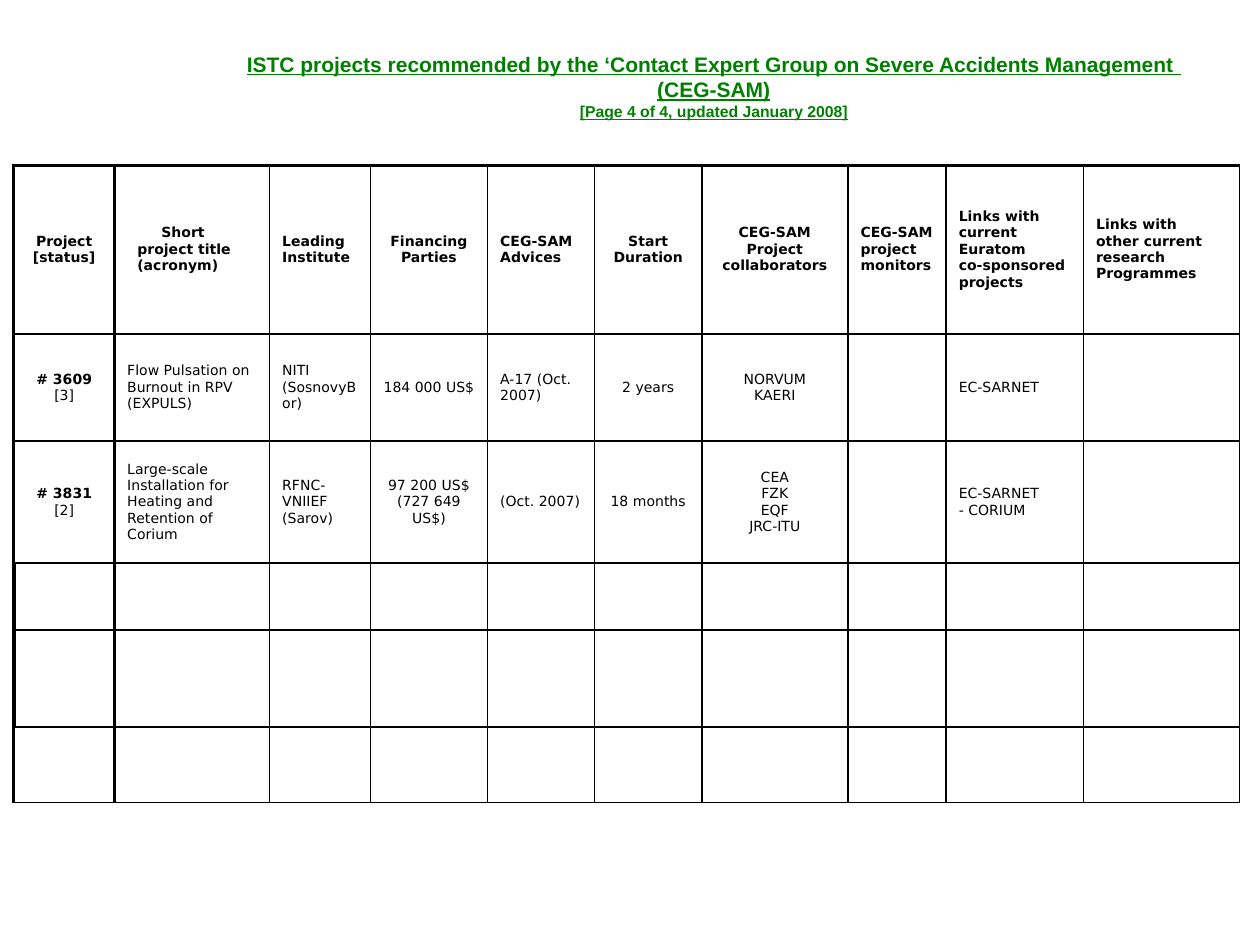
import dataclasses

import lxml.etree
import pptx
import pptx.dml.color
import pptx.enum.text
import pptx.oxml.ns
import pptx.util

Inches = pptx.util.Inches
Pt = pptx.util.Pt
Align = pptx.enum.text.PP_ALIGN
Anchor = pptx.enum.text.MSO_ANCHOR


@dataclasses.dataclass(frozen=True)
class Theme:
    """Colours, fonts and type sizes of the slide."""
    green: str = "008000"
    black: str = "000000"
    white: str = "FFFFFF"
    head: str = "Arial"
    body: str = "DejaVu Sans"
    large: float = 12
    small: float = 9
    cell: float = 8


THEME = Theme()
COLS = [0.8, 1.23, 0.8, 0.93, 0.85, 0.85, 1.16, 0.78, 1.09, 1.24]
ROWS = [1.34, 0.85, 0.97, 0.53, 0.77, 0.6]
EDGES = [2, 2, 2, 2.25, 2.25, 2]
MIDDLE = {0, 3, 5, 6}
STEPS = [0.27, 0.08, 0.08]
CELLS = [
    ["Project\n[status]", "Short\nproject title\n(acronym)",
     "Leading\nInstitute", "Financing\nParties", "CEG-SAM\nAdvices",
     "Start\nDuration", "CEG-SAM\nProject\ncollaborators",
     "CEG-SAM\nproject\nmonitors",
     "Links with\ncurrent\nEuratom\nco-sponsored\nprojects",
     "Links with\nother current\nresearch\nProgrammes"],
    ["# 3609\n[3]", "Flow Pulsation on Burnout in RPV (EXPULS)",
     "NITI\n(SosnovyBor)", "184 000 US$", "A-17 (Oct. 2007)", "2 years",
     "NORVUM\nKAERI", "", "EC-SARNET", ""],
    ["# 3831\n[2]",
     "Large-scale Installation for Heating and Retention of\nCorium",
     "RFNC-\nVNIIEF\n(Sarov)", "97 200 US$ (727 649\nUS$)", "(Oct. 2007)",
     "18 months", "CEA\nFZK\nEQF\nJRC-ITU", "", "EC-SARNET\n- CORIUM", ""],
]


def color(code):
    """Turn a hex code into a colour."""
    return pptx.dml.color.RGBColor.from_string(code)


def style(font, name, size, code, bold):
    """Set the face, size, colour and weight of a font."""
    font.name, font.size, font.bold = name, Pt(size), bold
    font.color.rgb = color(code)


def border(cell, widths):
    """Draw the four sides of a cell, widths keyed by side."""
    props = cell._tc.get_or_add_tcPr()
    for side in "LRTB":
        line = lxml.etree.SubElement(
            props, pptx.oxml.ns.qn(f"a:ln{side}"), w=str(Pt(widths[side])))
        fill = lxml.etree.SubElement(line, pptx.oxml.ns.qn("a:solidFill"))
        lxml.etree.SubElement(
            fill, pptx.oxml.ns.qn("a:srgbClr"), val=THEME.black)


def add_title(slide):
    """Add the underlined heading with its page note."""
    box = slide.shapes.add_textbox(
        Inches(1.5), Inches(0.36), Inches(8.33), Inches(0.65))
    box.text_frame.word_wrap = True
    para = box.text_frame.paragraphs[0]
    para.alignment = Align.CENTER
    style(para.font, THEME.head, THEME.large, THEME.green, True)
    para.font.underline = True
    lines = ["ISTC projects recommended by the ‘Contact Expert Group "
             "on Severe Accidents Management ", "(CEG-SAM)"]
    for line in lines:
        para.add_run().text = line
        para.add_line_break()
    note = para.add_run()
    note.text = "[Page 4 of 4, updated January 2008]"
    note.font.size = Pt(THEME.small)


def fill_cell(cell, row, col):
    """Write and format one cell of the grid."""
    cell.text = CELLS[row][col] if row < len(CELLS) else ""
    cell.vertical_anchor = Anchor.MIDDLE
    for index, para in enumerate(cell.text_frame.paragraphs):
        para.alignment = Align.CENTER if col in MIDDLE else Align.LEFT
        if (row, col) == (0, 1):
            props = para._p.get_or_add_pPr()
            props.set("marL", str(Inches(STEPS[index])))
            props.set("indent", "0")
        bold = row == 0 or (col == 0 and index == 0)
        style(para.font, THEME.body, THEME.cell, THEME.black, bold)
    edge = EDGES[row]
    border(cell, {"L": edge if col < 2 else 1, "R": edge if col == 0 else 1,
                  "T": 2 if row == 0 else 1, "B": 1})
    if row == 0:
        cell.fill.solid()
        cell.fill.fore_color.rgb = color(THEME.white)
    else:
        cell.fill.background()


def add_grid(slide):
    """Add the table of projects."""
    table = slide.shapes.add_table(
        len(ROWS), len(COLS), Inches(0.11), Inches(1.31),
        Inches(sum(COLS)), Inches(sum(ROWS))).table
    table.first_row = table.horz_banding = False
    for col, width in enumerate(COLS):
        table.columns[col].width = Inches(width)
    for row, height in enumerate(ROWS):
        table.rows[row].height = Inches(height)
        for col in range(len(COLS)):
            fill_cell(table.cell(row, col), row, col)


def main():
    """Build the slide and save it."""
    deck = pptx.Presentation()
    deck.slide_width, deck.slide_height = Inches(10), Inches(7.5)
    slide = deck.slides.add_slide(deck.slide_layouts[6])
    add_title(slide)
    add_grid(slide)
    deck.save("out.pptx")


if __name__ == "__main__":
    main()
